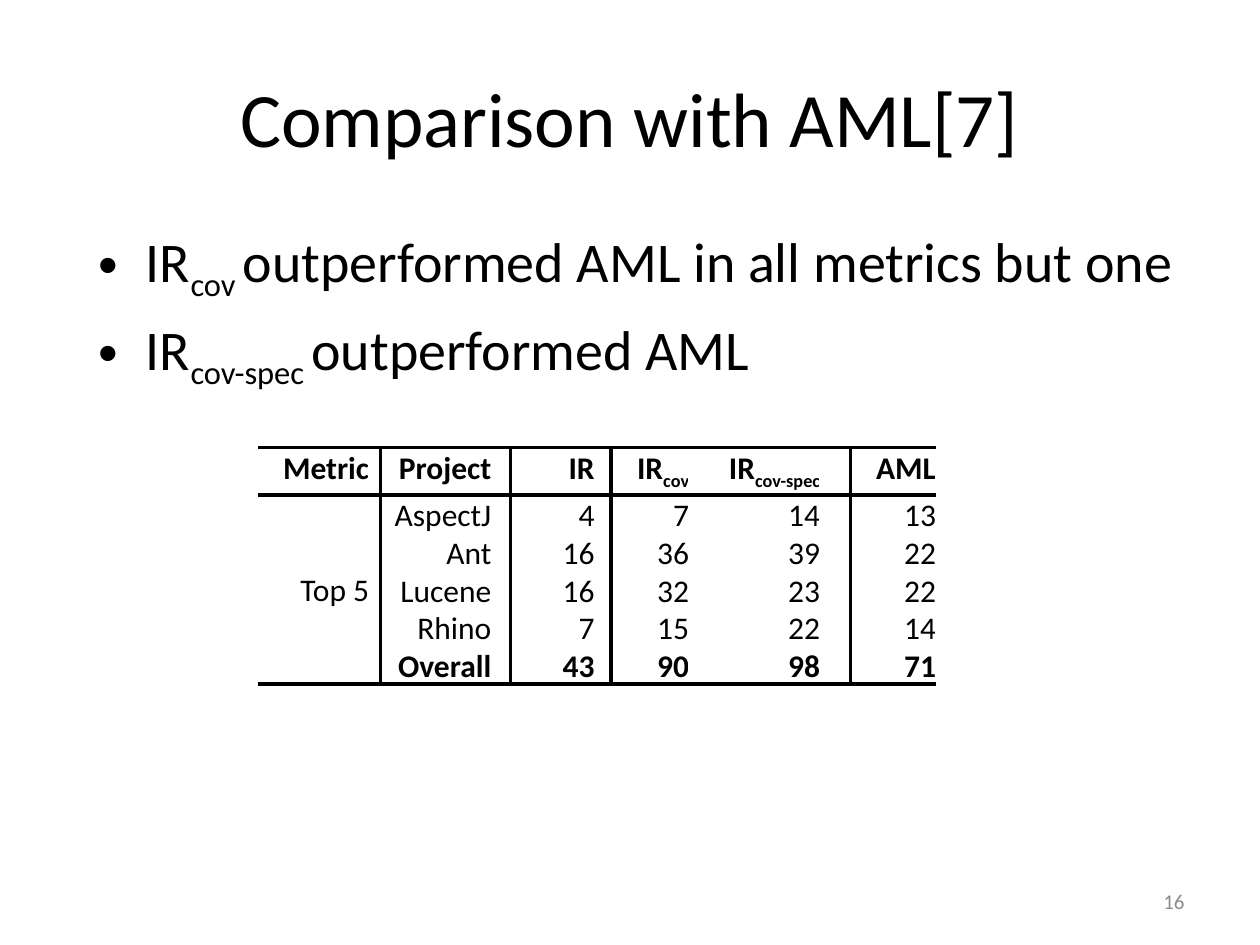
from lxml.etree import SubElement
from pptx import Presentation
from pptx.dml.color import RGBColor
from pptx.enum.shapes import MSO_CONNECTOR
from pptx.enum.text import MSO_ANCHOR, PP_ALIGN
from pptx.oxml.ns import qn
from pptx.util import Inches, Pt

BLACK = "000000"
GRAY = "8C8C8C"
BULLETS = [
    [("IR", False), ("cov ", True), ("outperformed AML in all metrics but one", False)],
    [("IR", False), ("cov-spec ", True), ("outperformed AML", False)],
]
HEADINGS = [
    [("Metric", False)],
    [("Project", False)],
    [("IR", False)],
    [("IR", False), ("cov", True)],
    [("IR", False), ("cov-spec", True)],
    [("AML", False)],
]
RESULTS = [
    ("AspectJ", 4, 7, 14, 13),
    ("Ant", 16, 36, 39, 22),
    ("Lucene", 16, 32, 23, 22),
    ("Rhino", 7, 15, 22, 14),
    ("Overall", 43, 90, 98, 71),
]
COLUMN_WIDTHS = [0.83, 0.97, 0.82, 0.75, 1.04, 0.92]
ROW_HEIGHTS = [0.37] + [0.3] * len(RESULTS)
RULE_LEFT, RULE_RIGHT = 2.05, 7.43
RULE_TOP, RULE_BOTTOM = 3.55, 5.43


def color(value):
    """Turn a hex string into a colour."""
    return RGBColor.from_string(value)


def add_spans(paragraph, spans, size, fill=BLACK, bold=False):
    """Add (text, is_subscript) runs to a paragraph."""
    for text, subscript in spans:
        span = paragraph.add_run()
        span.text = text
        span.font.name = "Calibri"
        span.font.size = Pt(size)
        span.font.bold = bold
        span.font.color.rgb = color(fill)
        if subscript:
            span._r.get_or_add_rPr().set("baseline", "-25000")


def add_box(page, left, top, width, height, anchor):
    """Add a wrapping text box and return its text frame."""
    box = page.shapes.add_textbox(
        Inches(left), Inches(top), Inches(width), Inches(height)
    )
    frame = box.text_frame
    frame.word_wrap = True
    frame.vertical_anchor = anchor
    return frame


def add_line_of_text(page, place, text, size, alignment, fill=BLACK):
    """Add a vertically centred box with one paragraph."""
    paragraph = add_box(page, *place, MSO_ANCHOR.MIDDLE).paragraphs[0]
    paragraph.alignment = alignment
    add_spans(paragraph, [(text, False)], size, fill)


def add_bullets(page, place, items, size):
    """Add a bulleted list with hanging indents."""
    frame = add_box(page, *place, MSO_ANCHOR.TOP)
    for index, spans in enumerate(items):
        paragraph = frame.add_paragraph() if index else frame.paragraphs[0]
        paragraph.space_before = Pt(size * 0.2)
        properties = paragraph._p.get_or_add_pPr()
        properties.set("marL", str(Inches(0.38)))
        properties.set("indent", str(Inches(-0.38)))
        SubElement(properties, qn("a:buFont")).set("typeface", "Arial")
        SubElement(properties, qn("a:buChar")).set("char", "•")
        add_spans(paragraph, spans, size)


def fill_cell(cell, spans, bold=False):
    """Write right-aligned text into a cell without margins."""
    cell.margin_left = cell.margin_right = 0
    cell.margin_top = cell.margin_bottom = 0
    paragraph = cell.text_frame.paragraphs[0]
    paragraph.alignment = PP_ALIGN.RIGHT
    add_spans(paragraph, spans, 18, bold=bold)


def add_results(page):
    """Add the table of results per project."""
    table = page.shapes.add_table(
        len(ROW_HEIGHTS), len(COLUMN_WIDTHS), Inches(2.1), Inches(3.57),
        Inches(sum(COLUMN_WIDTHS)), Inches(sum(ROW_HEIGHTS)),
    ).table
    table.first_row = table.horz_banding = False
    for column, width in zip(table.columns, COLUMN_WIDTHS):
        column.width = Inches(width)
    for row, height in zip(table.rows, ROW_HEIGHTS):
        row.height = Inches(height)
    for cell in table.iter_cells():
        cell.fill.background()
    for column, spans in enumerate(HEADINGS):
        fill_cell(table.cell(0, column), spans, bold=True)
    metric = table.cell(1, 0)
    metric.merge(table.cell(len(RESULTS), 0))
    metric.vertical_anchor = MSO_ANCHOR.MIDDLE
    fill_cell(metric, [("Top 5", False)])
    for row, values in enumerate(RESULTS, start=1):
        for column, value in enumerate(values, start=1):
            fill_cell(table.cell(row, column), [(str(value), False)],
                      bold=row == len(RESULTS))


def add_rule(page, start, end):
    """Add a straight black line between two points."""
    rule = page.shapes.add_connector(
        MSO_CONNECTOR.STRAIGHT, *map(Inches, start), *map(Inches, end)
    )
    rule.line.color.rgb = color(BLACK)
    rule.line.width = Pt(2)
    SubElement(rule._element.spPr, qn("a:effectLst"))


def main():
    """Build the slide and save it."""
    deck = Presentation()
    deck.slide_width, deck.slide_height = Inches(10), Inches(7.5)
    page = deck.slides.add_slide(deck.slide_layouts[6])
    add_line_of_text(page, (0.5, 0.3, 9, 1.25), "Comparison with AML[7]", 44,
                     PP_ALIGN.CENTER)
    add_line_of_text(page, (7.17, 6.95, 2.33, 0.4), "16", 12,
                     PP_ALIGN.RIGHT, GRAY)
    add_bullets(page, (0.68, 1.75, 9.32, 4.95), BULLETS, 32)
    add_results(page)
    for y in (RULE_TOP, RULE_BOTTOM, 3.93):
        add_rule(page, (RULE_LEFT, y), (RULE_RIGHT, y))
    for x in (3.02, 4.05, 4.85, 6.75):
        add_rule(page, (x, RULE_TOP), (x, RULE_BOTTOM))
    deck.save("out.pptx")


if __name__ == "__main__":
    main()
